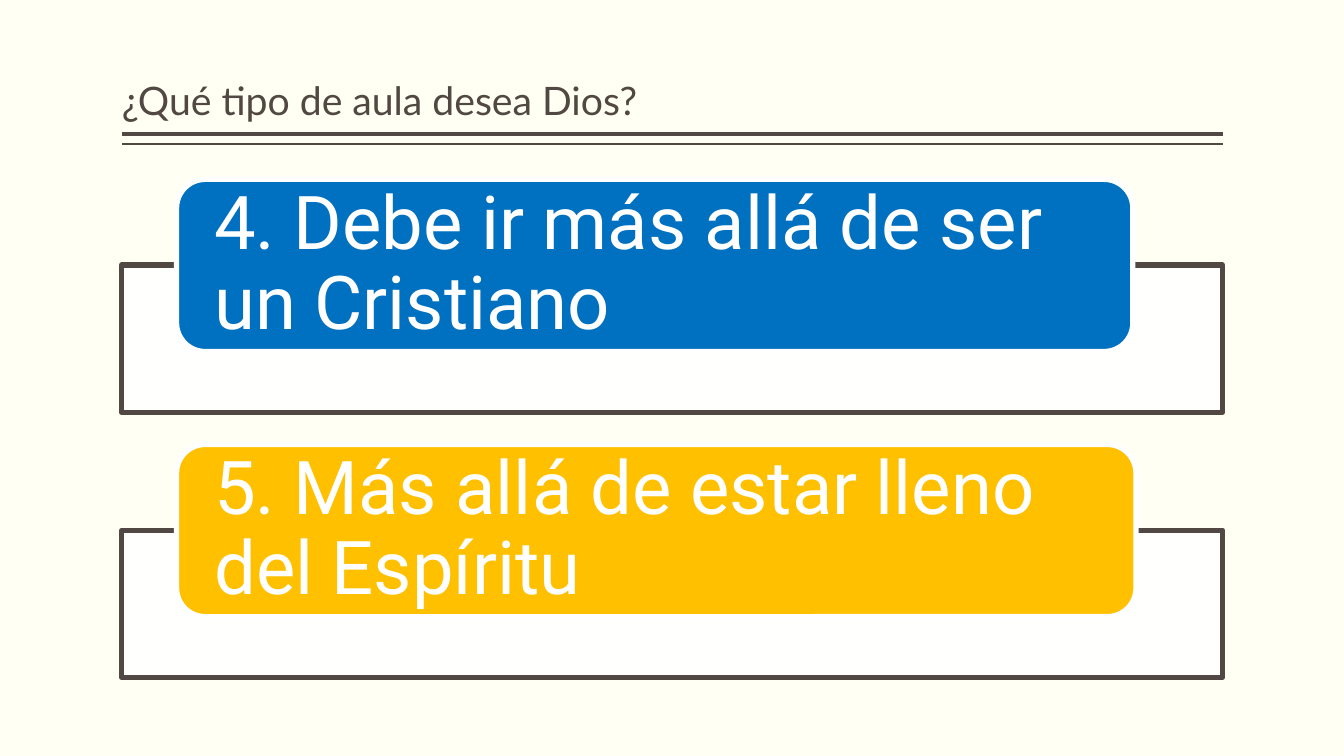
from lxml import etree
from pptx import Presentation
from pptx.dml.color import RGBColor
from pptx.enum.shapes import MSO_CONNECTOR, MSO_SHAPE
from pptx.enum.text import MSO_ANCHOR, MSO_AUTO_SIZE, PP_ALIGN
from pptx.oxml.ns import qn
from pptx.util import Cm, Pt

TITLE = "¿Qué tipo de aula desea Dios?"
POINTS = [
    ("4. Debe ir más allá de ser un Cristiano", "0070C0", 24.1),
    ("5. Más allá de estar lleno del Espíritu", "FFC000", 24.18),
]
RULES = [(3.38, 3), (3.63, 1)]
BACKGROUND, DARK, WHITE = "FFFFF3", "514843", "FFFFFF"

LEFT, WIDTH = 3.07, 27.74
LABEL_LEFT, LABEL_TOP, LABEL_HEIGHT = 4.45, 4.52, 4.34
PANEL_DROP, PANEL_HEIGHT = 2.16, 3.71
PITCH = 6.68


def color(hex_string):
    return RGBColor.from_string(hex_string)


def format_text(frame, text, font_name, size, hex_string, anchor, margins):
    frame.text = text
    frame.word_wrap = True
    frame.auto_size = MSO_AUTO_SIZE.NONE
    frame.vertical_anchor = anchor
    side, end = margins
    frame.margin_left = frame.margin_right = Cm(side)
    frame.margin_top = frame.margin_bottom = Cm(end)
    paragraph = frame.paragraphs[0]
    paragraph.alignment = PP_ALIGN.LEFT
    paragraph.line_spacing = 0.9
    paragraph.font.name = font_name
    paragraph.font.size = Pt(size)
    paragraph.font.color.rgb = color(hex_string)


def add_box(slide, kind, left, top, width, height, fill, line):
    shape = slide.shapes.add_shape(kind, Cm(left), Cm(top), Cm(width), Cm(height))
    shape.shadow.inherit = False
    shape.fill.solid()
    shape.fill.fore_color.rgb = color(fill)
    shape.line.color.rgb = color(line)
    shape.line.width = Pt(3.78)
    return shape


def add_rule(slide, top, weight):
    rule = slide.shapes.add_connector(
        MSO_CONNECTOR.STRAIGHT, Cm(LEFT + WIDTH), Cm(top), Cm(LEFT), Cm(top)
    )
    rule.line.color.rgb = color(DARK)
    rule.line.width = Pt(weight)
    etree.SubElement(rule._element.spPr, qn("a:effectLst"))


def add_point(slide, top, text, fill, width):
    panel = add_box(slide, MSO_SHAPE.RECTANGLE, LEFT, top + PANEL_DROP,
                    WIDTH, PANEL_HEIGHT, WHITE, DARK)
    panel_color = panel._element.spPr.find(qn("a:solidFill"))[0]
    etree.SubElement(panel_color, qn("a:alpha"), val="90000")
    label = add_box(slide, MSO_SHAPE.ROUNDED_RECTANGLE, LABEL_LEFT, top,
                    width, LABEL_HEIGHT, fill, WHITE)
    format_text(label.text_frame, text, "Roboto", 53, WHITE,
                MSO_ANCHOR.MIDDLE, (0.74, 0))


def main():
    presentation = Presentation()
    presentation.slide_width, presentation.slide_height = Cm(33.87), Cm(19.05)
    slide = presentation.slides.add_slide(presentation.slide_layouts[5])
    slide.background.fill.solid()
    slide.background.fill.fore_color.rgb = color(BACKGROUND)

    title = slide.shapes.title
    title.left, title.top = Cm(LEFT), Cm(0.2)
    title.width, title.height = Cm(WIDTH), Cm(3.05)
    format_text(title.text_frame, TITLE, "Lato", 28, DARK,
                MSO_ANCHOR.BOTTOM, (0, 0.13))

    for top, weight in RULES:
        add_rule(slide, top, weight)
    for index, (text, fill, width) in enumerate(POINTS):
        add_point(slide, LABEL_TOP + index * PITCH, text, fill, width)

    presentation.save("out.pptx")


if __name__ == "__main__":
    main()
